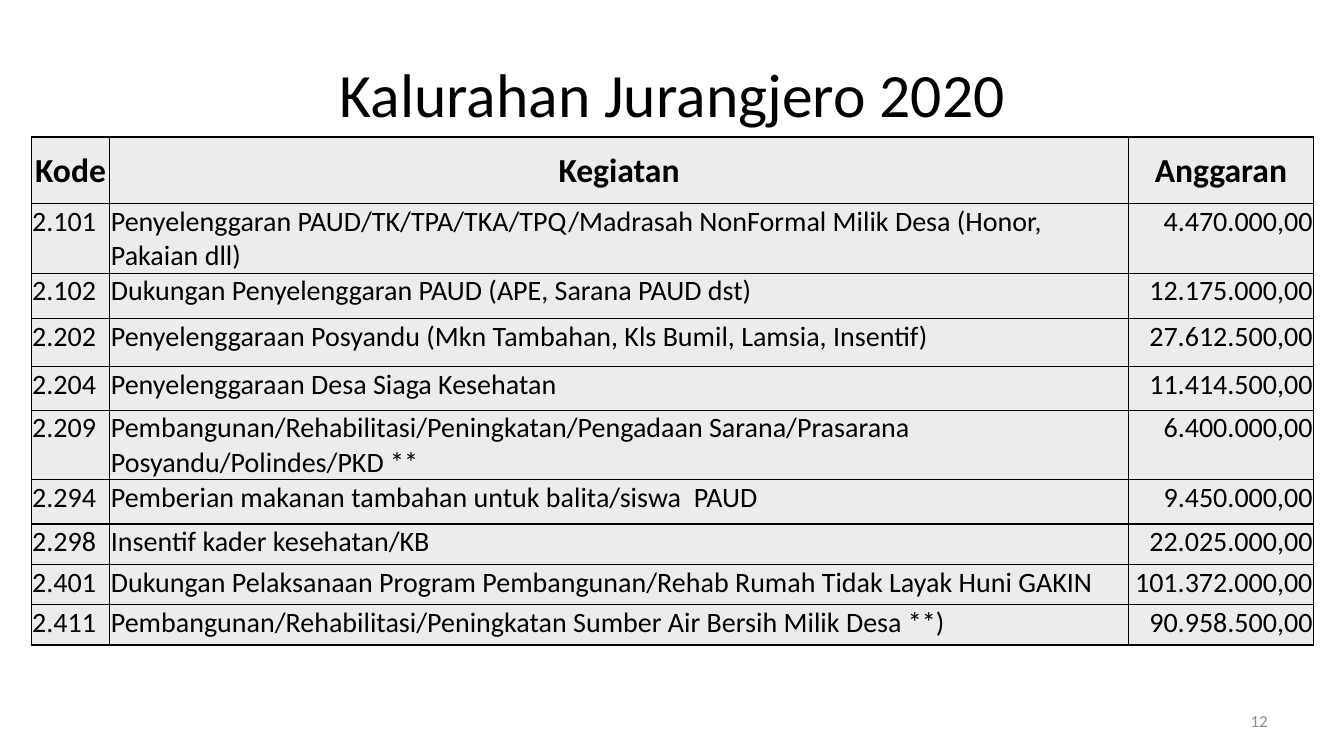
from pptx import Presentation, oxml
from pptx.dml.color import RGBColor
from pptx.enum import text
from pptx.util import Inches, Pt

# Content
TITLE = "Kalurahan Jurangjero 2020"
PAGE = "12"
HEAD = ("Kode", "Kegiatan", "Anggaran")
ROWS = [
    ("2.101", "Penyelenggaran PAUD/TK/TPA/TKA/TPQ/Madrasah NonFormal Milik Desa (Honor, Pakaian dll)", "4.470.000,00"),
    ("2.102", "Dukungan Penyelenggaran PAUD (APE, Sarana PAUD dst)", "12.175.000,00"),
    ("2.202", "Penyelenggaraan Posyandu (Mkn Tambahan, Kls Bumil, Lamsia, Insentif)", "27.612.500,00"),
    ("2.204", "Penyelenggaraan Desa Siaga Kesehatan", "11.414.500,00"),
    ("2.209", "Pembangunan/Rehabilitasi/Peningkatan/Pengadaan Sarana/Prasarana Posyandu/Polindes/PKD **", "6.400.000,00"),
    ("2.294", "Pemberian makanan tambahan untuk balita/siswa  PAUD", "9.450.000,00"),
    ("2.298", "Insentif kader kesehatan/KB", "22.025.000,00"),
    ("2.401", "Dukungan Pelaksanaan Program Pembangunan/Rehab Rumah Tidak Layak Huni GAKIN", "101.372.000,00"),
    ("2.411", "Pembangunan/Rehabilitasi/Peningkatan Sumber Air Bersih Milik Desa **)", "90.958.500,00"),
]
WIDTHS = (0.78, 10.1, 1.84)
HEIGHTS = (0.66, 0.69, 0.45, 0.48, 0.43, 0.69, 0.44, 0.4, 0.4, 0.4)

# Format values
LEFT, MID, RIGHT = text.PP_ALIGN.LEFT, text.PP_ALIGN.CENTER, text.PP_ALIGN.RIGHT
ALIGNS = (LEFT, MID, RIGHT)
CENTER, TOP = text.MSO_ANCHOR.MIDDLE, text.MSO_ANCHOR.TOP
INK, GREY, FILL = "000000", "8C8C8C", "ECECEC"
PADS = {"margin_left": 0.01, "margin_right": 0.01, "margin_top": 0.01, "margin_bottom": 0}


def color(code):
    return RGBColor.from_string(code)


def write(frame, words, align, size, ink=INK, bold=False):
    par = frame.paragraphs[0]
    par.alignment = align
    run = par.add_run()
    run.text = words
    for key, val in {"name": "Calibri", "size": Pt(size), "bold": bold}.items():
        setattr(run.font, key, val)
    run.font.color.rgb = color(ink)


def label(slide, box, words, align, size, ink=INK):
    frame = slide.shapes.add_textbox(*map(Inches, box)).text_frame
    frame.word_wrap = True
    frame.vertical_anchor = CENTER
    write(frame, words, align, size, ink)


def border(cell):
    props = cell._tc.get_or_add_tcPr()
    for spot, side in enumerate(("lnL", "lnR", "lnT", "lnB")):
        props.insert(spot, oxml.parse_xml(
            f'<a:{side} xmlns:a="http://schemas.openxmlformats.org/drawingml/2006/main"'
            f' w="{Pt(1)}"><a:solidFill><a:srgbClr val="{INK}"/></a:solidFill></a:{side}>'))


def budget(slide):
    box = (0.31, 1.36, sum(WIDTHS), sum(HEIGHTS))
    grid = slide.shapes.add_table(len(HEIGHTS), len(WIDTHS), *map(Inches, box)).table
    for col, wide in zip(grid.columns, WIDTHS):
        col.width = Inches(wide)
    for row, high in zip(grid.rows, HEIGHTS):
        row.height = Inches(high)
    for r, line in enumerate([HEAD] + ROWS):
        top = r == 0
        for c, words in enumerate(line):
            cell = grid.cell(r, c)
            for key, val in PADS.items():
                setattr(cell, key, Inches(val))
            cell.vertical_anchor = CENTER if top else TOP
            cell.fill.solid()
            cell.fill.fore_color.rgb = color(FILL)
            border(cell)
            align = MID if top else (LEFT, LEFT, RIGHT)[c]
            write(cell.text_frame, words, align, 24 if top else 20, bold=top)


def main():
    deck = Presentation()
    deck.slide_width, deck.slide_height = Inches(13.33), Inches(7.5)
    slide = deck.slides.add_slide(deck.slide_layouts[6])
    # Page number, title and table, back to front
    label(slide, (9.56, 6.95, 3.11, 0.4), PAGE, RIGHT, 12, GREY)
    label(slide, (0.67, 0.3, 12, 1.25), TITLE, MID, 44)
    budget(slide)
    deck.save("out.pptx")


if __name__ == "__main__":
    main()
